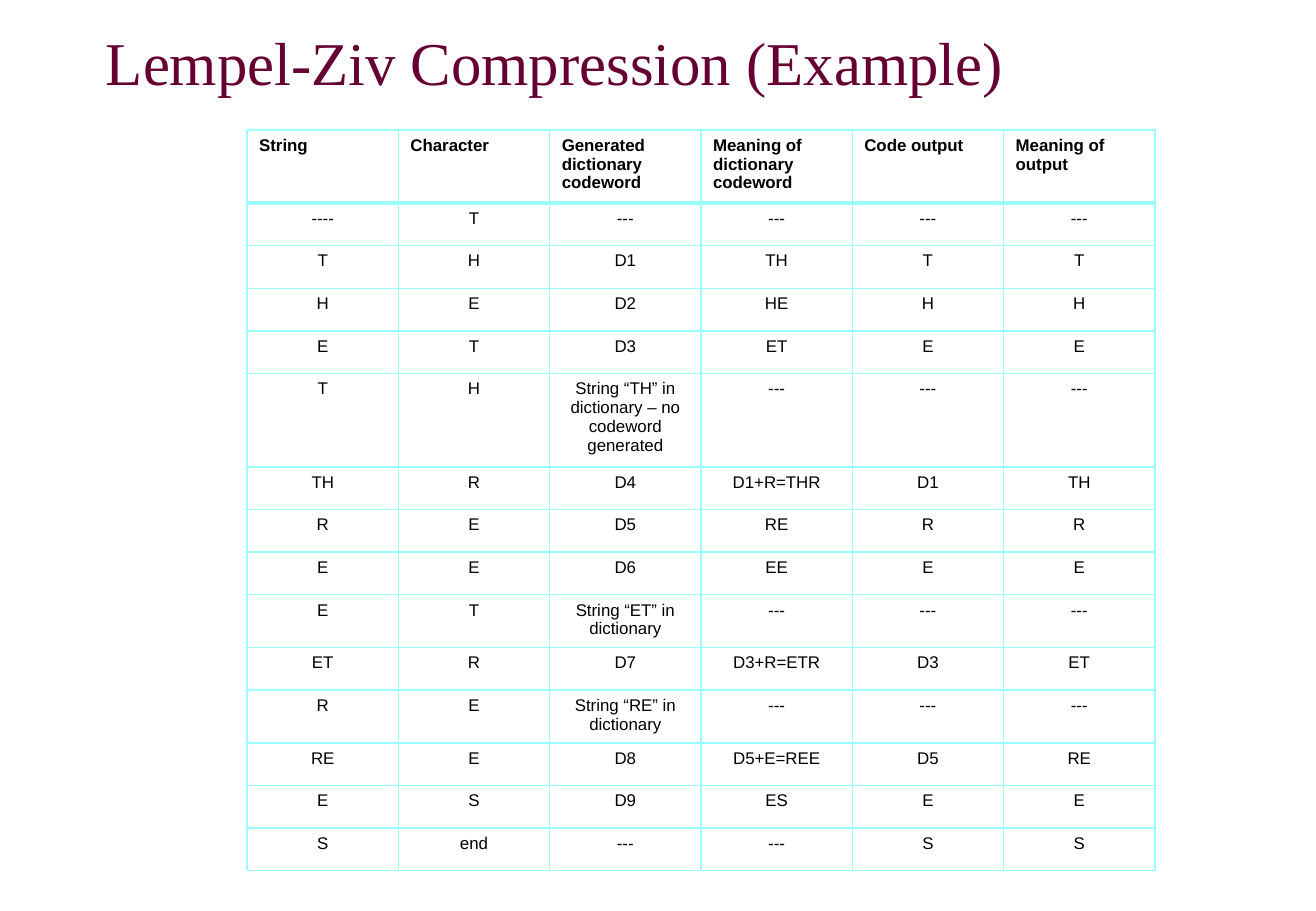
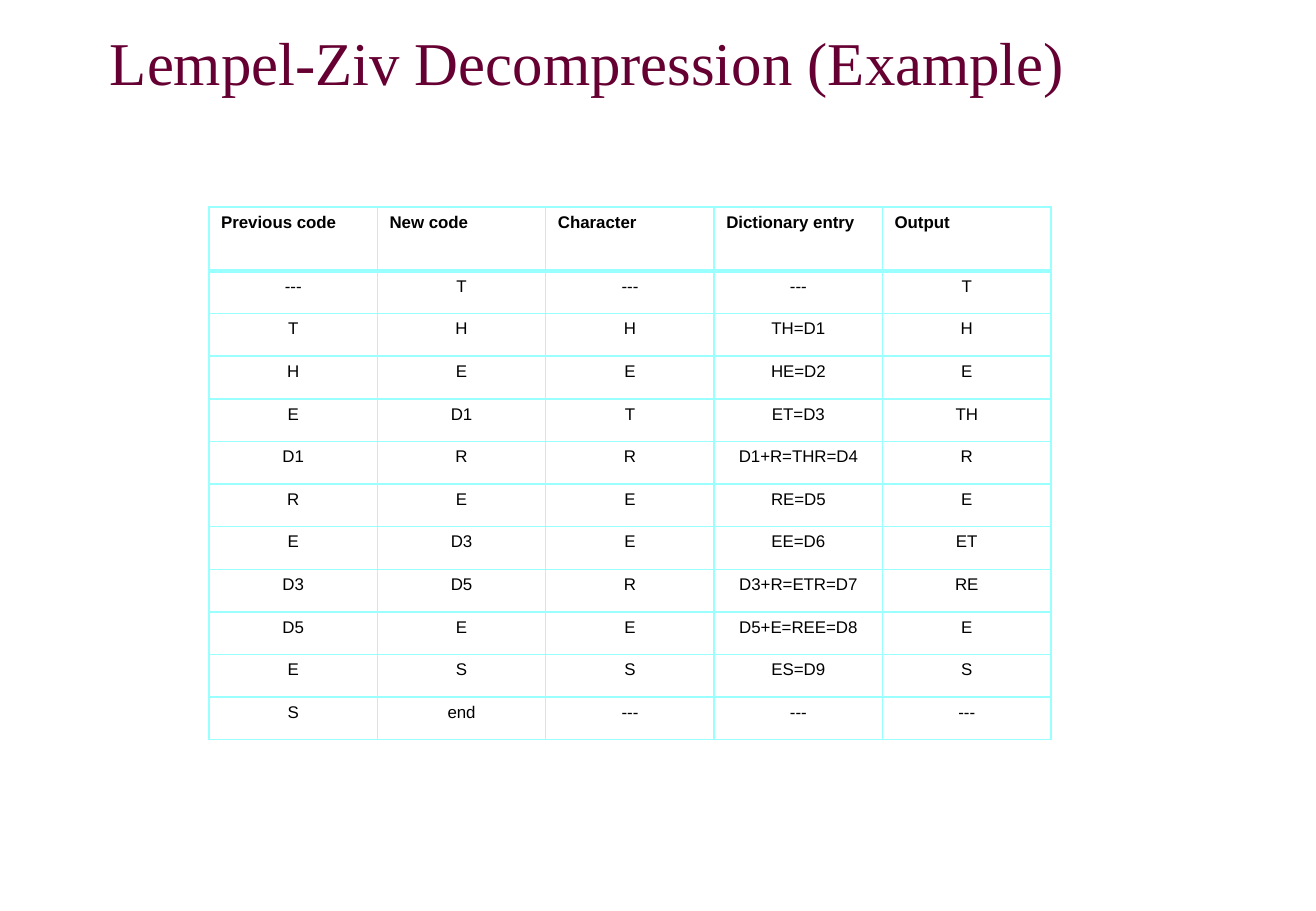
from lxml import etree
from pptx import Presentation
from pptx.dml.color import RGBColor
from pptx.enum.text import MSO_ANCHOR, PP_ALIGN
from pptx.oxml.ns import qn
from pptx.util import Emu, Pt

MIDDLE = MSO_ANCHOR.MIDDLE
LEFT = PP_ALIGN.LEFT
CENTER = PP_ALIGN.CENTER

EMU_PER_PX = 914400 / 121.5

COMPRESSION_ROWS = [
    "String|Character|Generated dictionary codeword|Meaning of dictionary codeword|Code output|Meaning of output",
    "----|T|---|---|---|---",
    "T|H|D1|TH|T|T",
    "H|E|D2|HE|H|H",
    "E|T|D3|ET|E|E",
    "T|H|String “TH” in dictionary – no codeword generated|---|---|---",
    "TH|R|D4|D1+R=THR|D1|TH",
    "R|E|D5|RE|R|R",
    "E|E|D6|EE|E|E",
    "E|T|String “ET” in dictionary|---|---|---",
    "ET|R|D7|D3+R=ETR|D3|ET",
    "R|E|String “RE” in dictionary|---|---|---",
    "RE|E|D8|D5+E=REE|D5|RE",
    "E|S|D9|ES|E|E",
    "S|end|---|---|S|S",
]

DECOMPRESSION_ROWS = [
    "Previous code|New code|Character|Dictionary entry|Output",
    "---|T|---|---|T",
    "T|H|H|TH=D1|H",
    "H|E|E|HE=D2|E",
    "E|D1|T|ET=D3|TH",
    "D1|R|R|D1+R=THR=D4|R",
    "R|E|E|RE=D5|E",
    "E|D3|E|EE=D6|ET",
    "D3|D5|R|D3+R=ETR=D7|RE",
    "D5|E|E|D5+E=REE=D8|E",
    "E|S|S|ES=D9|S",
    "S|end|---|---|---",
]


def px(length):
    return Emu(round(length * EMU_PER_PX))


def color(value):
    return RGBColor.from_string(value)


class Deck:
    TITLE_COLOR = "660033"
    TEXT_COLOR = "000000"
    PAPER = "FFFFFF"
    BORDER = "99FFFF"
    TITLE_FONT = "Times New Roman"
    TABLE_FONT = "Arial"
    HEADER_HEIGHT = 64

    def __init__(self, width, height):
        self.presentation = Presentation()
        self.presentation.slide_width = px(width)
        self.presentation.slide_height = px(height)
        self.slide = None

    def add_slide(self):
        self.slide = self.presentation.slides.add_slide(self.presentation.slide_layouts[6])
        fill = self.slide.background.fill
        fill.solid()
        fill.fore_color.rgb = color(self.PAPER)

    def style(self, paragraph, font_name, size, font_color, bold=False):
        font = paragraph.font
        font.name = font_name
        font.size = Pt(size)
        font.bold = bold
        font.color.rgb = color(font_color)

    def title(self, text, left):
        frame = self.slide.shapes.add_textbox(px(left), 0, px(1119), px(122)).text_frame
        frame.word_wrap = True
        frame.vertical_anchor = MIDDLE
        frame.text = text
        self.style(frame.paragraphs[0], self.TITLE_FONT, 36, self.TITLE_COLOR)

    def table(self, rows, left, top, width, height):
        records = [row.split("|") for row in rows]
        column_count = len(records[0])
        table = self.slide.shapes.add_table(
            len(records), column_count, px(left), px(top), px(width), px(height)
        ).table
        table.first_row = False
        table.horz_banding = False
        for column in table.columns:
            column.width = px(width / column_count)
        body_height = (height - self.HEADER_HEIGHT) / (len(records) - 1)
        for index, record in enumerate(records):
            table.rows[index].height = px(body_height if index else self.HEADER_HEIGHT)
            for cell, text in zip(table.rows[index].cells, record):
                self.cell(cell, text, index)

    def cell(self, cell, text, row_index):
        is_header = row_index == 0
        cell.text = text
        paragraph = cell.text_frame.paragraphs[0]
        paragraph.alignment = LEFT if is_header else CENTER
        self.style(paragraph, self.TABLE_FONT, 10, self.TEXT_COLOR, is_header)
        cell.fill.solid()
        cell.fill.fore_color.rgb = color(self.PAPER)
        self.borders(cell, top=3 if row_index == 1 else 1, bottom=3 if is_header else 1)

    def borders(self, cell, top, bottom):
        properties = cell._tc.get_or_add_tcPr()
        widths = {"a:lnL": 1, "a:lnR": 1, "a:lnT": top, "a:lnB": bottom}
        for position, (tag, width) in enumerate(widths.items()):
            line = etree.Element(qn(tag), w=str(Pt(width)))
            fill = etree.SubElement(line, qn("a:solidFill"))
            etree.SubElement(fill, qn("a:srgbClr"), val=self.BORDER)
            properties.insert(position, line)


def main():
    deck = Deck(1316, 911)

    deck.add_slide()
    deck.title("Lempel-Ziv Compression (Example)", 94)
    deck.table(COMPRESSION_ROWS, 247, 130, 908, 661)

    deck.add_slide()
    deck.title("Lempel-Ziv Decompression (Example)", 98)
    deck.table(DECOMPRESSION_ROWS, 209, 207, 842, 533)

    deck.presentation.save("out.pptx")


if __name__ == "__main__":
    main()
